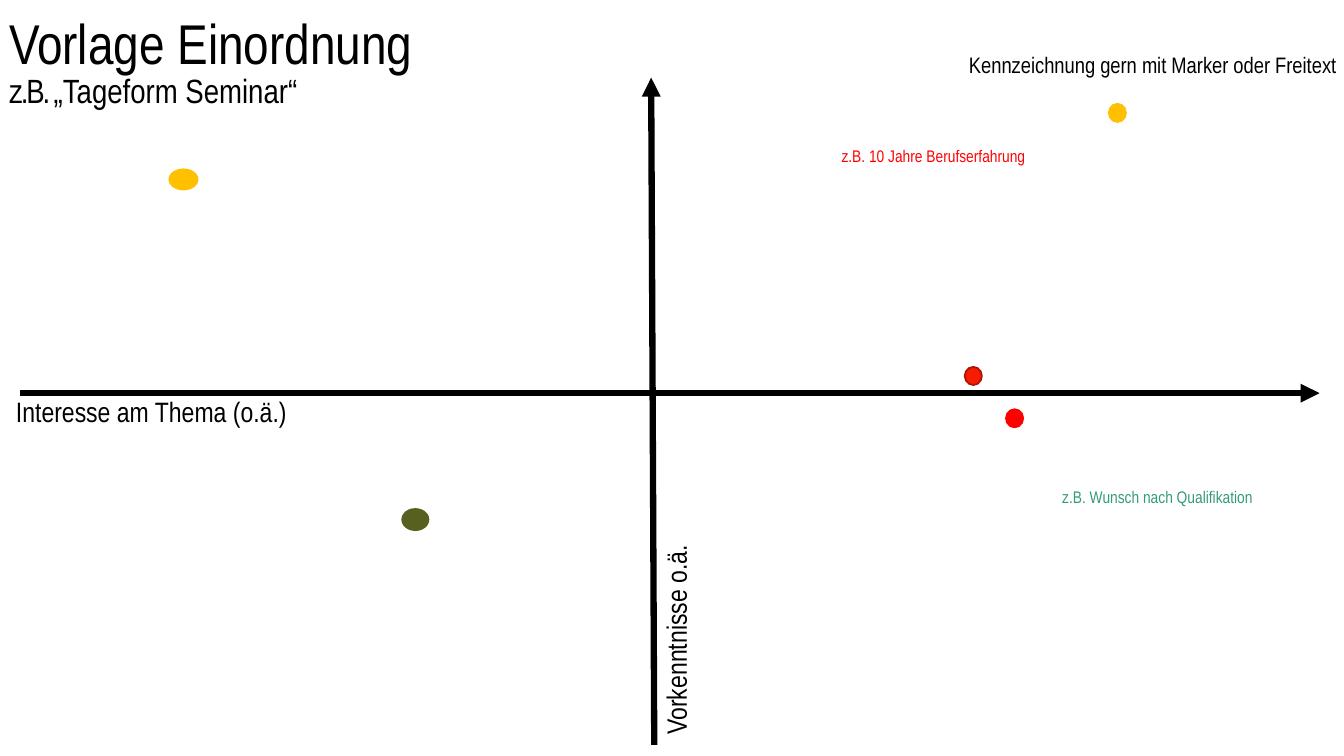
from pptx import Presentation
from pptx.dml.color import RGBColor
from pptx.enum.shapes import MSO_CONNECTOR as Link, MSO_SHAPE as Form
from pptx.enum.text import MSO_ANCHOR as Anchor, PP_ALIGN as Align
from pptx.oxml.ns import qn
from pptx.util import Inches, Pt
from lxml.etree import SubElement

BLACK = RGBColor(0x00, 0x00, 0x00)
RED = RGBColor(0xFF, 0x00, 0x00)
BRICK = RGBColor(0xF8, 0x1B, 0x02)
RUST = RGBColor(0xAF, 0x13, 0x01)
OLIVE = RGBColor(0x58, 0x60, 0x20)
AMBER = RGBColor(0xFF, 0xC0, 0x00)
GREEN = RGBColor(0x34, 0x9B, 0x7A)
FONT = "Arial Narrow"

# Places are percentages of the slide's width and height.
TITLE = (0.68, 2.4, 34.58, 12.27)
HEAD = [("Vorlage Einordnung ", 40, 0), ("z.B. „", 24, -150), ("Tageform Seminar“", 24, 0)]
SMALL = (1.28, 2.4)
DOTS = [
    (71.78, 48.53, SMALL, BRICK, RUST),
    (29.93, 67.33, (1.95, 2.8), OLIVE, OLIVE),
    (82.5, 13.73, SMALL, AMBER, AMBER),
    (74.85, 54.13, SMALL, RED, RED),
    (12.6, 22.4, (2.1, 2.67), AMBER, AMBER),
]
AXES = [(48.68, 98.53, 48.45, 10.27), (1.5, 52, 98.18, 52)]
LABELS = [
    ("Interesse am Thema (o.ä.)", (0.45, 51.47, 28.35, 5.87), 20, BLACK, Align.LEFT, 0),
    ("Vorkenntnisse o.ä.", (39.23, 75.87, 22.13, 5.87), 20, BLACK, Align.LEFT, 270),
    ("z.B. 10 Jahre Berufserfahrung", (61.88, 18.67, 19.05, 4), 12, RED, Align.LEFT, 0),
    ("z.B. Wunsch nach Qualifikation", (78.3, 63.73, 19.05, 4), 12, GREEN, Align.LEFT, 0),
    ("Kennzeichnung gern mit Marker oder Freitext", (62.4, 6.13, 37.8, 4.93), 16, BLACK, Align.RIGHT, 0),
]

deck = Presentation()
deck.slide_width, deck.slide_height = Inches(13.33), Inches(7.5)
slide = deck.slides.add_slide(deck.slide_layouts[6])
shapes = slide.shapes


def place(box):
    sides = (deck.slide_width, deck.slide_height) * 2
    return [round(side * part / 100) for side, part in zip(sides, box)]


def style(run, size, color):
    run.font.name, run.font.size = FONT, Pt(size)
    run.font.color.rgb = color


def add_title():
    frame = shapes.add_textbox(*place(TITLE)).text_frame
    frame.word_wrap = True
    frame.vertical_anchor = Anchor.MIDDLE
    frame.margin_left = frame.margin_right = frame.margin_top = frame.margin_bottom = 0
    para = frame.paragraphs[0]
    para.line_spacing = 0.85
    for row, (text, size, gap) in enumerate(HEAD):
        if row == 1:
            para.add_line_break()
        run = para.add_run()
        run.text = text
        style(run, size, BLACK)
        run.font._element.set("spc", str(gap))


def add_dot(left, top, size, fill, edge):
    dot = shapes.add_shape(Form.OVAL, *place((left, top, *size)))
    dot.shadow.inherit = False
    dot.fill.solid()
    dot.fill.fore_color.rgb = fill
    dot.line.color.rgb = edge
    dot.line.width = Pt(1.25)


def add_axis(ends):
    axis = shapes.add_connector(Link.STRAIGHT, *place(ends))
    axis.line.color.rgb = BLACK
    axis.line.width = Pt(4.5)
    SubElement(axis.line._get_or_add_ln(), qn("a:tailEnd"), type="triangle")
    SubElement(axis._element.spPr, qn("a:effectLst"))


def add_label(text, box, size, color, align, turn):
    label = shapes.add_textbox(*place(box))
    label.rotation = turn
    frame = label.text_frame
    frame.word_wrap = True
    frame.text = text
    para = frame.paragraphs[0]
    para.alignment = align
    style(para.runs[0], size, color)


def main():
    add_title()
    for ends in AXES:
        add_axis(ends)
    for dot in DOTS:
        add_dot(*dot)
    for label in LABELS:
        add_label(*label)
    deck.save("out.pptx")


if __name__ == "__main__":
    main()
